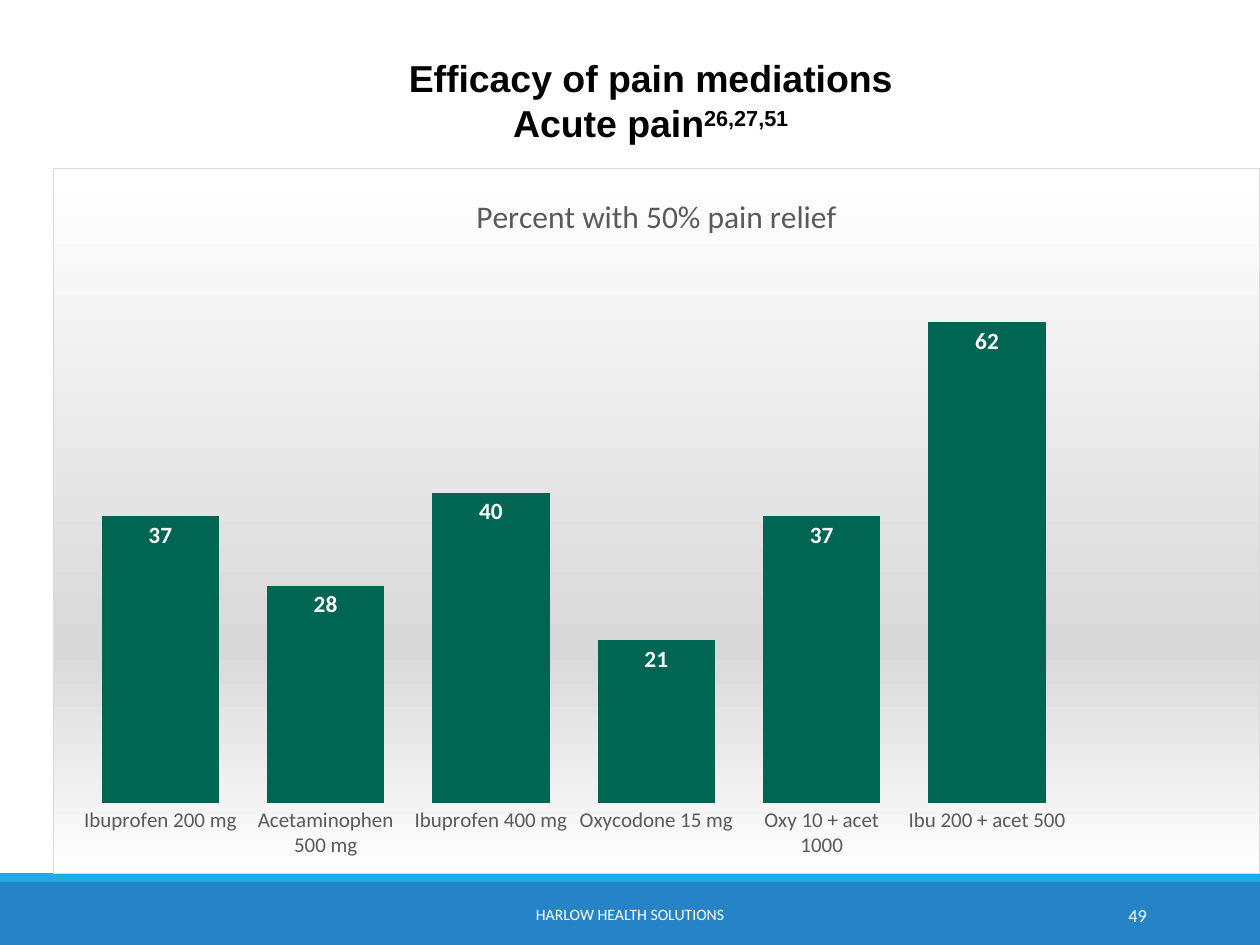
"""Build a slide with a column chart of pain relief by medication."""
from lxml import etree
from pptx import Presentation
from pptx.chart.data import CategoryChartData
from pptx.dml.color import RGBColor
from pptx.enum.chart import XL_CHART_TYPE, XL_LABEL_POSITION, XL_TICK_MARK
from pptx.enum.shapes import MSO_SHAPE
from pptx.enum.text import MSO_ANCHOR, PP_ALIGN
from pptx.oxml import parse_xml
from pptx.util import Inches, Pt

COLUMN = XL_CHART_TYPE.COLUMN_CLUSTERED
INSIDE_END = XL_LABEL_POSITION.INSIDE_END
NO_TICK = XL_TICK_MARK.NONE
RECTANGLE = MSO_SHAPE.RECTANGLE
MIDDLE = MSO_ANCHOR.MIDDLE
CENTER, RIGHT = PP_ALIGN.CENTER, PP_ALIGN.RIGHT

WIDTH, HEIGHT = 10, 7.5
COLORS = {"band": "2683C6", "strip": "1CADE4", "bar": "006653", "gray": "595959",
          "edge": "D9D9D9", "white": "FFFFFF", "black": "000000"}
BANDS = [("band", 7, 0.5), ("strip", 6.93, 0.07)]
CHART_TITLE = "Percent with 50% pain relief"
RELIEF = [("Ibuprofen 200 mg", 37), ("Acetaminophen 500 mg", 28),
          ("Ibuprofen 400 mg", 40), ("Oxycodone 15 mg", 21),
          ("Oxy 10 + acet 1000", 37), ("Ibu 200 + acet 500", 62), ("", None)]
CHART_BOX = (0.42, 1.33, 9.58, 5.61)
PLOT_SHARES = {"x": 0.02, "y": 0.13, "w": 0.96, "h": 0.77}
GRADIENT = [(0, "white"), (68, "edge"), (100, "white")]
TEXTS = [
    ((1.58, 0.42, 7.17, 0.75), CENTER, "Arial", 21.4, "black", True,
     [("Efficacy of pain mediations\vAcute pain", 0), ("26,27,51", 30)]),
    ((3.02, 7.06, 3.96, 0.4), CENTER, "Calibri", 9, "white", False,
     [("HARLOW HEALTH SOLUTIONS", 0)]),
    ((8.12, 7.06, 1.08, 0.4), RIGHT, "Calibri", 10.5, "white", False, [("49", 0)]),
]
CHART_NS = "http://schemas.openxmlformats.org/drawingml/2006/chart"
DRAWING_NS = "http://schemas.openxmlformats.org/drawingml/2006/main"


def color(name):
    return RGBColor.from_string(COLORS[name])


def style(font, face, size, name, bold=False):
    font.name, font.size, font.bold = face, Pt(size), bold
    font.color.rgb = color(name)


def add_band(page, name, top, height):
    band = page.shapes.add_shape(RECTANGLE, 0, Inches(top), Inches(WIDTH), Inches(height))
    band.shadow.inherit = False
    band.fill.solid()
    band.fill.fore_color.rgb = color(name)
    band.line.fill.background()


def add_text(page, place, align, face, size, name, bold, spans):
    frame = page.shapes.add_textbox(*map(Inches, place)).text_frame
    frame.word_wrap = True
    frame.vertical_anchor = MIDDLE
    para = frame.paragraphs[0]
    para.alignment = align
    for text, raised in spans:
        for number, line in enumerate(text.split("\v")):
            if number:
                para.add_line_break()
            span = para.add_run()
            span.text = line
            style(span.font, face, size, name, bold)
            if raised:
                span.font._element.set("baseline", str(raised * 1000))


def set_backdrop(chart):
    stops = "".join(f'<a:gs pos="{share * 1000}"><a:srgbClr val="{COLORS[name]}"/></a:gs>'
                    for share, name in GRADIENT)
    backdrop = parse_xml(
        f'<c:spPr xmlns:c="{CHART_NS}" xmlns:a="{DRAWING_NS}">'
        f'<a:gradFill><a:gsLst>{stops}</a:gsLst><a:lin ang="5400000" scaled="0"/></a:gradFill>'
        f'<a:ln w="{Pt(0.75)}"><a:solidFill><a:srgbClr val="{COLORS["edge"]}"/></a:solidFill>'
        '</a:ln></c:spPr>')
    chart._chartSpace.chart.addnext(backdrop)


def set_plot_layout(chart):
    area = chart._chartSpace.chart.plotArea
    for old in area.findall(f"{{{CHART_NS}}}layout"):
        area.remove(old)
    layout = etree.Element(f"{{{CHART_NS}}}layout")
    manual = etree.SubElement(layout, f"{{{CHART_NS}}}manualLayout")
    settings = {"layoutTarget": "inner", "xMode": "edge", "yMode": "edge", **PLOT_SHARES}
    for tag, value in settings.items():
        etree.SubElement(manual, f"{{{CHART_NS}}}{tag}").set("val", str(value))
    area.insert(0, layout)


def add_relief_chart(page):
    data = CategoryChartData()
    data.categories = [name for name, _ in RELIEF]
    data.add_series(CHART_TITLE, [value for _, value in RELIEF])
    chart = page.shapes.add_chart(COLUMN, *map(Inches, CHART_BOX), data).chart
    style(chart.font, "Calibri", 10, "black")
    chart.has_legend = False
    chart.has_title = True
    span = chart.chart_title.text_frame.paragraphs[0].add_run()
    span.text = CHART_TITLE
    style(span.font, "Calibri", 18, "gray")

    names = chart.category_axis
    names.major_tick_mark = names.minor_tick_mark = NO_TICK
    names.format.line.fill.background()
    style(names.tick_labels.font, "Calibri", 12, "gray")
    scale = chart.value_axis
    scale.minimum_scale, scale.maximum_scale = 0, 70
    scale.has_major_gridlines = False
    scale.visible = False

    plot = chart.plots[0]
    plot.gap_width = 41
    plot.vary_by_categories = False
    bars = plot.series[0]
    bars.format.fill.solid()
    bars.format.fill.fore_color.rgb = color("bar")
    labels = bars.data_labels
    labels.show_value = True
    labels.position = INSIDE_END
    style(labels.font, "Calibri", 13.3, "white", True)
    set_backdrop(chart)
    set_plot_layout(chart)


def main():
    deck = Presentation()
    deck.slide_width, deck.slide_height = Inches(WIDTH), Inches(HEIGHT)
    page = deck.slides.add_slide(deck.slide_layouts[6])
    for band in BANDS:
        add_band(page, *band)
    add_relief_chart(page)
    for text in TEXTS:
        add_text(page, *text)
    deck.save("out.pptx")


if __name__ == "__main__":
    main()
